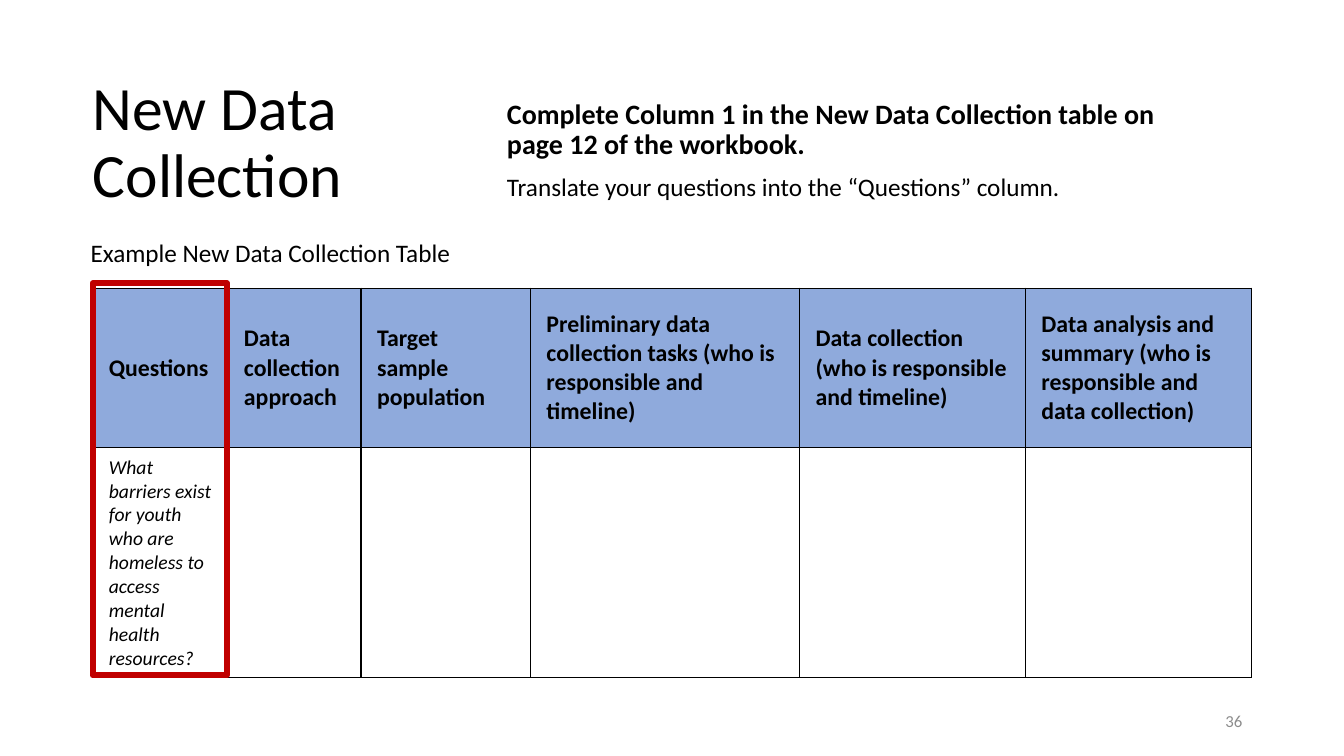
from dataclasses import dataclass

from lxml import etree
from pptx import Presentation
from pptx.dml.color import RGBColor
from pptx.enum.shapes import MSO_SHAPE
from pptx.enum.text import MSO_ANCHOR, PP_ALIGN
from pptx.oxml.ns import qn
from pptx.util import Pt

EMU_PER_PX = 9144  # 100 px to the inch
TITLE_ONLY = 5
MIDDLE, TOP = MSO_ANCHOR.MIDDLE, MSO_ANCHOR.TOP
LEFT, RIGHT = PP_ALIGN.LEFT, PP_ALIGN.RIGHT
RECTANGLE = MSO_SHAPE.RECTANGLE

FONT = "Calibri"
BLACK, GREY, RED, BLUE = "000000", "8C8C8C", "C00000", "8FAADC"


@dataclass(frozen=True)
class Box:
    left: int
    top: int
    width: int
    height: int


@dataclass(frozen=True)
class Line:
    text: str
    size: int
    bold: bool = False
    italic: bool = False
    color: str = BLACK
    align: int = LEFT
    spacing: float = 1.0
    before: int = 0


@dataclass(frozen=True)
class Column:
    heading: str
    width: int
    entry: str = ""


COLUMNS = [
    Column("Questions", 134, "What barriers exist for youth who are homeless "
                             "to access mental health resources?"),
    Column("Data collection approach", 132),
    Column("Target sample population", 168),
    Column("Preliminary data collection tasks (who is responsible and timeline)", 267),
    Column("Data collection (who is responsible and timeline)", 224),
    Column("Data analysis and summary (who is responsible and data collection)", 224),
]
ROW_HEIGHTS = [158, 228]
TABLE_BOX = Box(92, 286, sum(c.width for c in COLUMNS), sum(ROW_HEIGHTS))


def px(length: int) -> int:
    return length * EMU_PER_PX


def rgb(color: str) -> RGBColor:
    return RGBColor.from_string(color)


def place(box: Box) -> tuple[int, int, int, int]:
    return px(box.left), px(box.top), px(box.width), px(box.height)


def write(frame, lines: list[Line]) -> None:
    for index, line in enumerate(lines):
        paragraph = frame.paragraphs[0] if index == 0 else frame.add_paragraph()
        paragraph.text = line.text
        paragraph.alignment = line.align
        paragraph.line_spacing = line.spacing
        paragraph.space_before = Pt(line.before)
        for run in paragraph.runs:
            run.font.name = FONT
            run.font.size = Pt(line.size)
            run.font.bold = line.bold
            run.font.italic = line.italic
            run.font.color.rgb = rgb(line.color)


def add_text(slide, box: Box, lines: list[Line], anchor=MIDDLE) -> None:
    frame = slide.shapes.add_textbox(*place(box)).text_frame
    frame.word_wrap = True
    frame.vertical_anchor = anchor
    write(frame, lines)


def set_title(slide, box: Box, line: Line) -> None:
    title = slide.shapes.title
    title.left, title.top, title.width, title.height = place(box)
    frame = title.text_frame
    frame.word_wrap = True
    frame.vertical_anchor = MIDDLE
    frame.margin_left = 0
    write(frame, [line])


def add_borders(cell) -> None:
    properties = cell._tc.get_or_add_tcPr()
    for index, side in enumerate(("a:lnL", "a:lnR", "a:lnT", "a:lnB")):
        border = etree.Element(qn(side), w=str(Pt(1)))
        fill = etree.SubElement(border, qn("a:solidFill"))
        etree.SubElement(fill, qn("a:srgbClr"), val=BLACK)
        properties.insert(index, border)


def fill_cell(cell, line: Line, anchor, fill: str = "") -> None:
    cell.margin_left = cell.margin_right = px(16)
    cell.margin_top = cell.margin_bottom = px(8)
    cell.vertical_anchor = anchor
    if fill:
        cell.fill.solid()
        cell.fill.fore_color.rgb = rgb(fill)
    else:
        cell.fill.background()
    add_borders(cell)
    if line.text:
        write(cell.text_frame, [line])


def add_collection_table(slide) -> None:
    table = slide.shapes.add_table(len(ROW_HEIGHTS), len(COLUMNS), *place(TABLE_BOX)).table
    table.horz_banding = False
    for row, height in zip(table.rows, ROW_HEIGHTS):
        row.height = px(height)
    for index, column in enumerate(COLUMNS):
        table.columns[index].width = px(column.width)
        fill_cell(table.cell(0, index), Line(column.heading, 17, bold=True), MIDDLE, BLUE)
        fill_cell(table.cell(1, index), Line(column.entry, 14, italic=True), TOP)


def add_highlight(slide, box: Box) -> None:
    highlight = slide.shapes.add_shape(RECTANGLE, *place(box))
    highlight.shadow.inherit = False
    highlight.fill.background()
    highlight.line.color.rgb = rgb(RED)
    highlight.line.width = Pt(4.5)


def main() -> None:
    deck = Presentation()
    deck.slide_width, deck.slide_height = px(1333), px(750)
    slide = deck.slides.add_slide(deck.slide_layouts[TITLE_ONLY])

    # Title and instructions
    set_title(slide, Box(92, 64, 389, 158), Line("New Data Collection", 44, spacing=0.9))
    add_text(slide, Box(493, 74, 749, 152), [
        Line("Complete Column 1 in the New Data Collection table on\v"
             "page 12 of the workbook.", 20, bold=True, spacing=0.9),
        Line("Translate your questions into the “Questions” column.", 18,
             spacing=0.9, before=10),
    ])

    # Example table with its first column marked
    add_collection_table(slide)
    add_text(slide, Box(80, 231, 480, 42),
             [Line("Example New Data Collection Table", 18)], TOP)
    add_highlight(slide, Box(92, 281, 133, 389))

    # Slide number
    add_text(slide, Box(942, 695, 300, 40), [Line("36", 12, color=GREY, align=RIGHT)])

    deck.save("out.pptx")


if __name__ == "__main__":
    main()
